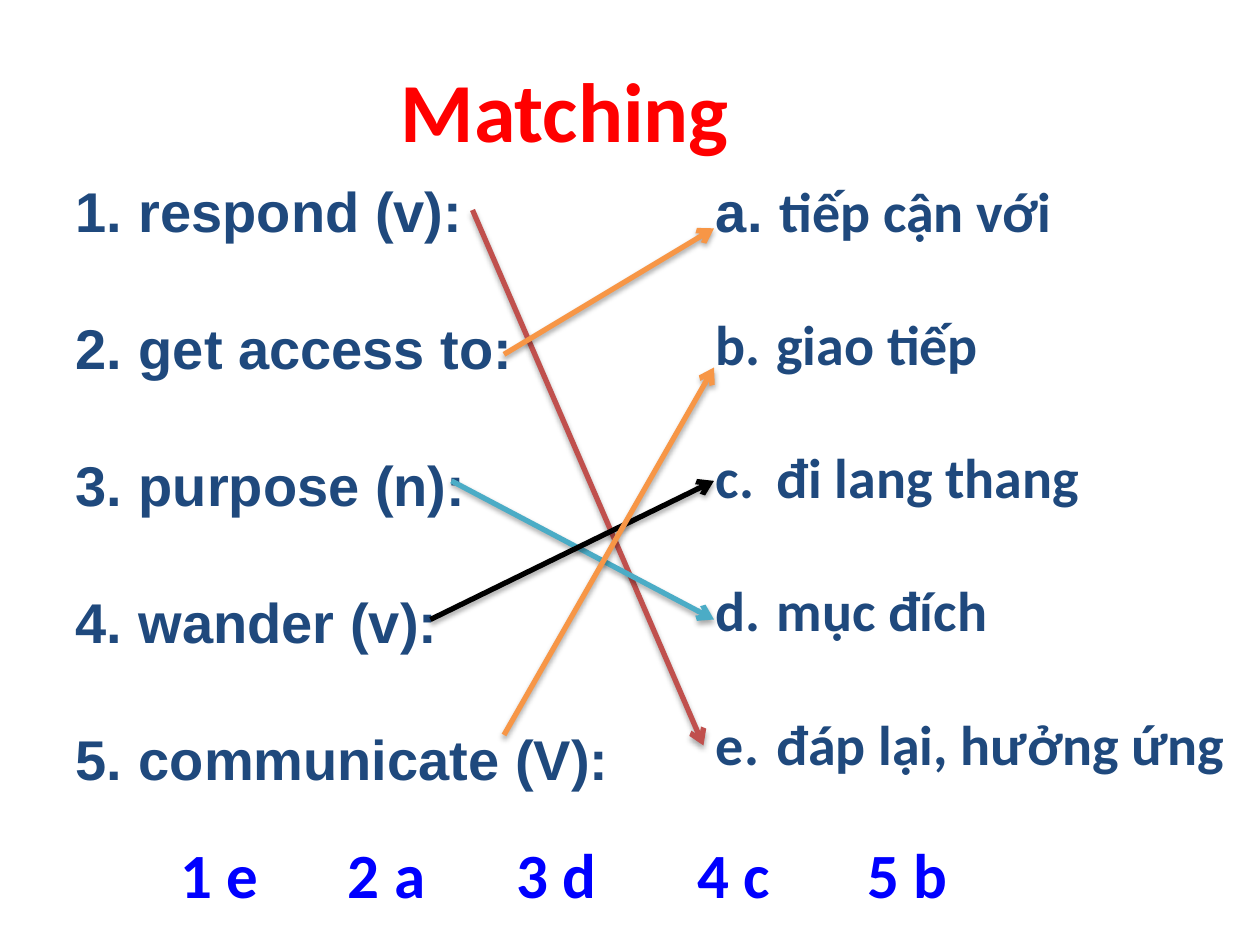
"""Build a vocabulary matching slide with arrows joining words to meanings."""
from dataclasses import dataclass

from lxml.etree import SubElement
from pptx import Presentation
from pptx.dml.color import RGBColor
from pptx.enum.shapes import MSO_CONNECTOR
from pptx.oxml.ns import qn
from pptx.slide import Slide
from pptx.util import Inches, Pt

COLORS = {
    "title": "FF0000", "words": "1F497D", "answers": "0000FF", "red": "C0504D",
    "orange": "F79646", "teal": "4BACC6", "black": "000000",
}
COLUMNS, ROWS = 120, 90
SLIDE_WIDTH, SLIDE_HEIGHT = Inches(10), Inches(7.5)
NUMBER_INDENT = Inches(0.38)
ANSWER_TABS = (1.33, 2.67, 4.1, 5.45)


@dataclass(frozen=True)
class TextBlock:
    column: float
    row: float
    width: float
    height: float
    paragraphs: tuple[str, ...]
    color: str
    size: int
    font: str = "Calibri"
    numbering: str = ""
    first_font: str = ""
    gap: float = 0
    tabs: tuple[float, ...] = ()


@dataclass(frozen=True)
class Match:
    start: tuple[float, float]
    end: tuple[float, float]
    color: str


BLOCKS = (
    TextBlock(37, 5, 39, 11, ("Matching",), "title", 48),
    TextBlock(
        6, 16.2, 54, 59.4,
        ("respond (v):", "get access to:", "purpose (n):", "wander (v):", "communicate (V):"),
        "words", 32, font="Arial", numbering="arabicPeriod", gap=39.9,
    ),
    TextBlock(
        67, 16.2, 51, 65.9,
        ("tiếp cận với", "giao tiếp", "đi lang thang", "mục đích", "đáp lại, hưởng ứng"),
        "words", 32, numbering="alphaLcPeriod", first_font="Arial", gap=37.7,
    ),
    TextBlock(
        16, 79, 88, 8.5, ("\t".join(("1 e", "2 a", "3 d", "4 c", "5 b")),),
        "answers", 36, tabs=ANSWER_TABS,
    ),
)
MATCHES = (
    Match((45, 20), (67, 71), "red"),
    Match((48, 33.75), (68, 21.75), "orange"),
    Match((43, 45.8), (68, 59), "teal"),
    Match((41, 59), (68, 45.8), "black"),
    Match((48, 70), (68, 35), "orange"),
)


def across(columns: float) -> int:
    """Turn grid columns into a length."""
    return round(SLIDE_WIDTH * columns / COLUMNS)


def down(rows: float) -> int:
    """Turn grid rows into a length."""
    return round(SLIDE_HEIGHT * rows / ROWS)


def add_run(paragraph, text: str, block: TextBlock, font: str) -> None:
    """Add one bold run in the block's style."""
    run = paragraph.add_run()
    run.text = text
    formats = {"name": font, "size": Pt(block.size), "bold": True}
    for name, value in formats.items():
        setattr(run.font, name, value)
    run.font.color.rgb = RGBColor.from_string(COLORS[block.color])


def add_text_block(slide: Slide, block: TextBlock) -> None:
    """Draw a text box, numbered or tabbed where the block asks for it."""
    shape = slide.shapes.add_textbox(
        across(block.column), down(block.row), across(block.width), down(block.height)
    )
    frame = shape.text_frame
    frame.word_wrap = True
    for index, text in enumerate(block.paragraphs):
        paragraph = frame.add_paragraph() if index else frame.paragraphs[0]
        paragraph.space_after = Pt(block.gap)
        properties = paragraph._p.get_or_add_pPr()
        if block.numbering:
            for name, value in {"marL": NUMBER_INDENT, "indent": -NUMBER_INDENT}.items():
                properties.set(name, str(int(value)))
            SubElement(properties, qn("a:buFontTx"))
            SubElement(properties, qn("a:buAutoNum"), type=block.numbering)
            lead_font = block.first_font if block.first_font and not index else block.font
            add_run(paragraph, " ", block, lead_font)
        if block.tabs:
            tab_list = SubElement(properties, qn("a:tabLst"))
            for position in block.tabs:
                SubElement(tab_list, qn("a:tab"), pos=str(int(Inches(position))), algn="l")
        add_run(paragraph, text, block, block.font)


def add_match(slide: Slide, match: Match) -> None:
    """Draw a shadowed arrow from a word to its meaning."""
    (start_column, start_row), (end_column, end_row) = match.start, match.end
    connector = slide.shapes.add_connector(
        MSO_CONNECTOR.STRAIGHT,
        across(start_column), down(start_row), across(end_column), down(end_row),
    )
    connector.line.width = Pt(3)
    connector.line.color.rgb = RGBColor.from_string(COLORS[match.color])
    SubElement(connector.line._get_or_add_ln(), qn("a:tailEnd"), type="arrow")
    effects = SubElement(connector._element.spPr, qn("a:effectLst"))
    shadow = SubElement(
        effects, qn("a:outerShdw"),
        blurRad=str(int(Pt(3.1))), dist=str(int(Pt(1.8))), dir="5400000", rotWithShape="0",
    )
    shadow_color = SubElement(shadow, qn("a:srgbClr"), val=COLORS["black"])
    SubElement(shadow_color, qn("a:alpha"), val="35000")


def main() -> None:
    """Assemble and save the slide."""
    presentation = Presentation()
    for name, value in {"slide_width": SLIDE_WIDTH, "slide_height": SLIDE_HEIGHT}.items():
        setattr(presentation, name, value)
    slide = presentation.slides.add_slide(presentation.slide_layouts[6])
    *word_blocks, answers = BLOCKS
    for block in word_blocks:
        add_text_block(slide, block)
    for match in MATCHES:
        add_match(slide, match)
    add_text_block(slide, answers)
    presentation.save("out.pptx")


if __name__ == "__main__":
    main()
